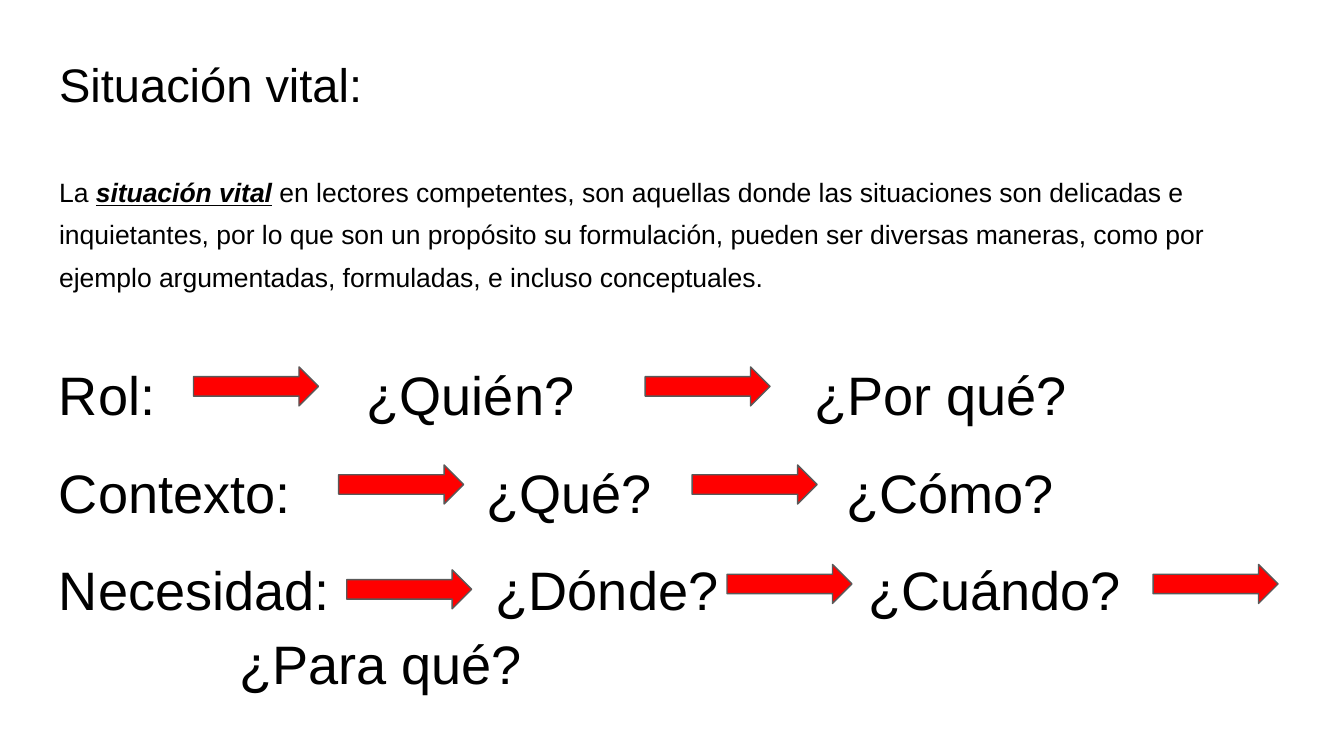
import pptx
import pptx.dml.color
import pptx.enum.shapes
import pptx.enum.text
import pptx.oxml
import pptx.oxml.ns
import pptx.util

Inches, Pt = pptx.util.Inches, pptx.util.Pt
FONT, BLACK, RED, GRAY = "Arial", "000000", "FF0000", "595959"
SLIDE_W = 10
ARROW_W, ARROW_H = 0.93, 0.29

INTRO = [
    ("La ", False),
    ("situación vital", True),
    (" en lectores competentes, son aquellas donde las situaciones son delicadas e "
     "inquietantes, por lo que son un propósito su formulación, pueden ser diversas "
     "maneras, como por ejemplo argumentadas, formuladas, e incluso conceptuales.", False),
]
ROWS = [
    ("Rol:\t¿Quién?\t¿Por qué?", [2.29, 5.62], [(1.1, 0.21), (4.46, 0.21)]),
    ("Contexto:\t¿Qué?\t¿Cómo?", [3.18, 5.86], [(2.18, 0.94), (4.81, 0.94)]),
    ("Necesidad:\t¿Dónde?\t¿Cuándo?\v\t¿Para qué?", [1.34, 3.25, 6.02],
     [(2.24, 1.72), (5.07, 1.68), (8.24, 1.68)]),
]


def color(value):
    """Return the RGB colour for a hex string."""
    return pptx.dml.color.RGBColor.from_string(value)


def style_run(r, size, emphasis=False):
    """Set the font of a run, with bold underlined italics for emphasis."""
    r.font.name, r.font.size = FONT, Pt(size)
    r.font.color.rgb = color(BLACK)
    r.font.bold = r.font.italic = r.font.underline = emphasis


def prepare_frame(sp, x, y, w, h):
    """Place a text shape and return its wrapped, top-anchored frame."""
    sp.left, sp.top, sp.width, sp.height = map(Inches, (x, y, w, h))
    tf = sp.text_frame
    tf.word_wrap = True
    tf.auto_size = pptx.enum.text.MSO_AUTO_SIZE.NONE
    tf.vertical_anchor = pptx.enum.text.MSO_ANCHOR.TOP
    tf.margin_left = tf.margin_right = tf.margin_top = tf.margin_bottom = Inches(0.1)
    return tf


def set_tabs(p, stops):
    """Give a paragraph left tab stops, in inches from its text edge."""
    tabs = pptx.oxml.parse_xml("<a:tabLst %s/>" % pptx.oxml.ns.nsdecls("a"))
    for stop in stops:
        tab = tabs.makeelement(pptx.oxml.ns.qn("a:tab"), {"pos": str(Inches(stop)), "algn": "l"})
        tabs.append(tab)
    p._p.get_or_add_pPr().append(tabs)


def add_heading(s, x, y, w, h):
    """Fill the title placeholder with the heading and the introduction."""
    tf = prepare_frame(s.shapes.title, x, y, w, h)
    tf.text = "Situación vital:"
    style_run(tf.paragraphs[0].runs[0], 25.2)
    p = tf.add_paragraph()
    p.line_spacing, p.space_before = 1.33, Pt(29)
    for text, emphasis in INTRO:
        r = p.add_run()
        r.text = text
        style_run(r, 14.2, emphasis)
    for p in tf.paragraphs:
        p.alignment = pptx.enum.text.PP_ALIGN.LEFT


def add_arrow(s, x, y):
    """Draw one red arrow pointing right."""
    sp = s.shapes.add_shape(pptx.enum.shapes.MSO_SHAPE.RIGHT_ARROW,
                            Inches(x), Inches(y), Inches(ARROW_W), Inches(ARROW_H))
    sp.shadow.inherit = False
    sp.fill.solid()
    sp.fill.fore_color.rgb = color(RED)
    sp.line.color.rgb = color(GRAY)
    sp.line.width = Pt(0.75)


def add_questions(s, x, y, w, h):
    """Write the rows of questions and the arrows that link them."""
    sp = s.shapes.add_textbox(0, 0, 0, 0)
    tf = prepare_frame(sp, x, y, w, h)
    for i, (text, stops, arrows) in enumerate(ROWS):
        p = tf.add_paragraph() if i else tf.paragraphs[0]
        p.text = text
        p.line_spacing, p.space_before = 1.15, Pt(12 if i else 0)
        set_tabs(p, stops)
        for r in p.runs:
            style_run(r, 29)
        for dx, dy in arrows:
            add_arrow(s, x + dx, y + dy)


def main():
    """Build and save the slide."""
    prs = pptx.Presentation()
    prs.slide_width, prs.slide_height = Inches(SLIDE_W), Inches(SLIDE_W * 9 / 16)
    s = prs.slides.add_slide(prs.slide_layouts[5])
    add_heading(s, 0.34, 0.31, 9.32, 1.86)
    add_questions(s, 0.34, 2.52, 9.32, 3.74)
    prs.save("out.pptx")


if __name__ == "__main__":
    main()
